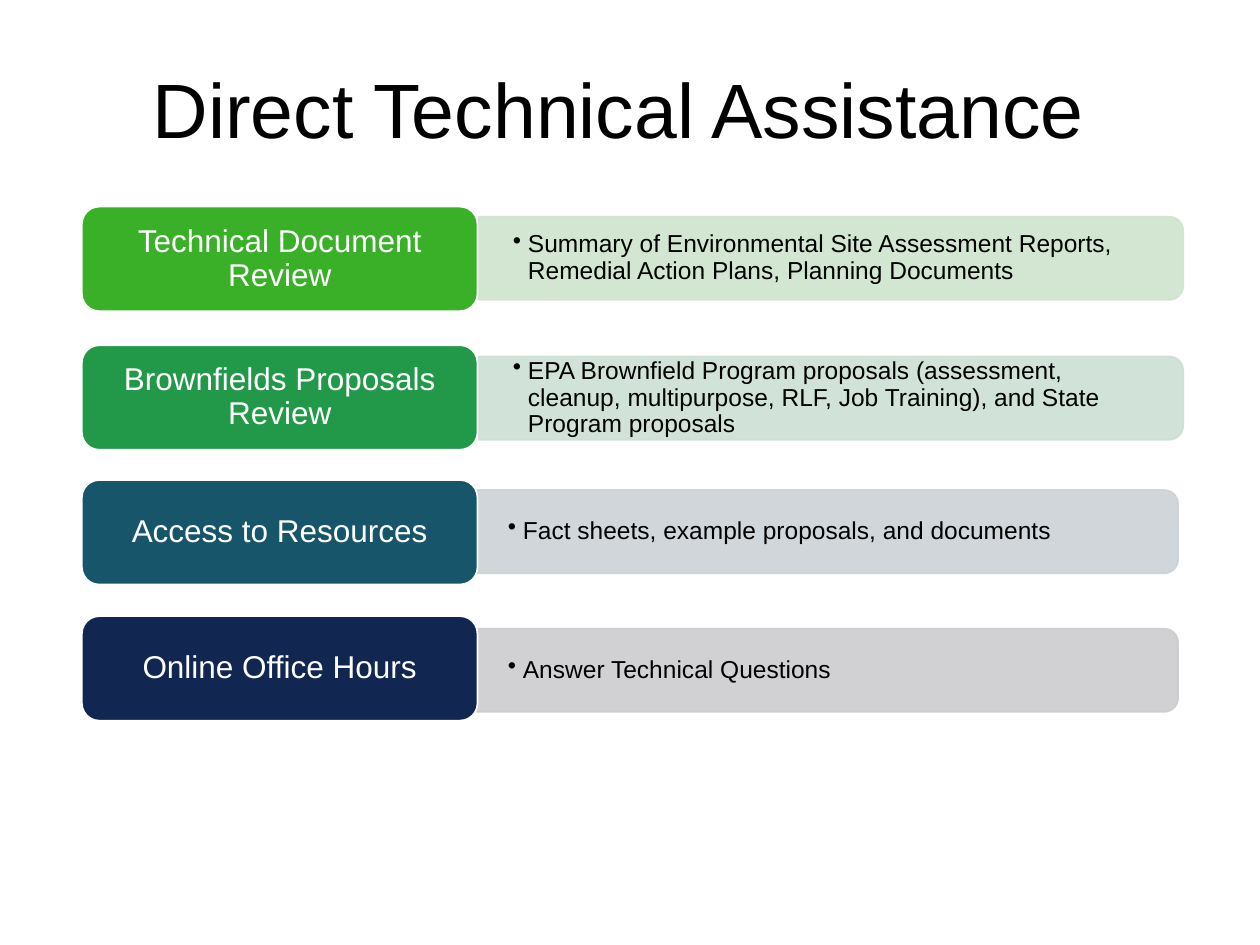
from dataclasses import dataclass
from math import cos, pi, sin

from lxml import etree
from pptx import Presentation
from pptx.dml.color import RGBColor
from pptx.enum.shapes import MSO_SHAPE as Shape
from pptx.enum.text import MSO_ANCHOR as Anchor, PP_ALIGN as Align
from pptx.oxml.ns import qn
from pptx.util import Inches, Pt


@dataclass(frozen=True)
class Theme:
    """Colours, font and type sizes."""
    font: str = "Arial"
    dark: str = "000000"
    light: str = "FFFFFF"
    title: int = 44
    label: int = 18
    detail: int = 14
    panel_alpha: int = 90000


THEME = Theme()
LABEL_X, LABEL_W, LABEL_H = 0.65, 3.14, 0.83
PANEL_W, PANEL_H, PANEL_RADIUS = 5.59, 0.66, 0.11
ROWS = [
    ("Technical Document Review", "3AB028", 1.64,
     "Summary of Environmental Site Assessment Reports, Remedial Action Plans, "
     "Planning Documents", "CEE4CD", 3.8, 1.72),
    ("Brownfields Proposals Review", "229949", 2.74,
     "EPA Brownfield Program proposals (assessment, cleanup, multipurpose, RLF, "
     "Job Training), and State Program proposals", "CCDFD4", 3.8, 2.83),
    ("Access to Resources", "17566A", 3.81,
     "Fact sheets, example proposals, and documents", "CCD2D6", 3.76, 3.89),
    ("Online Office Hours", "122652", 4.89,
     "Answer Technical Questions", "CCCDD0", 3.76, 4.99),
]


def set_all(obj, values):
    """Set each attribute of obj from a dict."""
    for name, value in values.items():
        setattr(obj, name, value)


def write(sp, text, size, color, align, anchor, margins):
    """Fill a shape with one formatted paragraph and return it."""
    tf = sp.text_frame
    sides = ("margin_left", "margin_top", "margin_right", "margin_bottom")
    set_all(tf, {"word_wrap": True, "vertical_anchor": anchor,
                 **{side: Inches(m) for side, m in zip(sides, margins)}})
    p = tf.paragraphs[0]
    set_all(p, {"alignment": align, "line_spacing": 0.9})
    r = p.add_run()
    r.text = text
    set_all(r.font, {"name": THEME.font, "size": Pt(size)})
    r.font.color.rgb = RGBColor.from_string(color)
    return p


def paint(sp, fill, line):
    """Give a shape a solid fill and a one-point line, without shadow."""
    sp.shadow.inherit = False
    sp.fill.solid()
    sp.fill.fore_color.rgb = RGBColor.from_string(fill)
    sp.line.color.rgb = RGBColor.from_string(line)
    sp.line.width = Pt(1)


def add_title(s, text, x, y, w, h):
    """Place the slide title in its box."""
    sp = s.shapes.title
    set_all(sp, dict(zip(("left", "top", "width", "height"), map(Inches, (x, y, w, h)))))
    write(sp, text, THEME.title, THEME.dark, Align.CENTER, Anchor.TOP,
          (0.1, 0.1, 0.1, 0.05))


def add_panel(s, text, fill, x, y, w, h):
    """Draw a detail panel with rounded right corners and a bulleted text."""
    rad, steps = PANEL_RADIUS, 8
    points = [(x, y)]
    for cy, start in ((y + rad, -pi / 2), (y + h - rad, 0)):
        for i in range(steps + 1):
            a = start + i * pi / 2 / steps
            points.append((x + w - rad + rad * cos(a), cy + rad * sin(a)))
    points.append((x, y + h))
    emu = [(Inches(px), Inches(py)) for px, py in points]
    builder = s.shapes.build_freeform(*emu[0])
    builder.add_line_segments(emu[1:], close=True)
    sp = builder.convert_to_shape()
    paint(sp, fill, fill)
    for color in sp._element.spPr.iter(qn("a:srgbClr")):
        etree.SubElement(color, qn("a:alpha"), val=str(THEME.panel_alpha))
    p = write(sp, text, THEME.detail, THEME.dark, Align.LEFT, Anchor.MIDDLE,
              (0.27, 0.17, 0.3, 0.17))
    pPr = p._p.get_or_add_pPr()
    pPr.set("marL", str(Inches(0.12)))
    pPr.set("indent", str(Inches(-0.12)))
    etree.SubElement(pPr, qn("a:buChar"), char="•")


def add_label(s, text, fill, x, y, w, h):
    """Draw the rounded label at the head of a row."""
    sp = s.shapes.add_shape(Shape.ROUNDED_RECTANGLE, *map(Inches, (x, y, w, h)))
    paint(sp, fill, THEME.light)
    write(sp, text, THEME.label, THEME.light, Align.CENTER, Anchor.MIDDLE,
          (0.08, 0.04, 0.08, 0.04))


def main():
    """Build and save the slide."""
    prs = Presentation()
    set_all(prs, {"slide_width": Inches(10), "slide_height": Inches(7.5)})
    s = prs.slides.add_slide(prs.slide_layouts[5])
    add_title(s, "Direct Technical Assistance", 0.6, 0.47, 8.62, 1.09)
    for label, color, label_y, detail, tint, panel_x, panel_y in ROWS:
        add_panel(s, detail, tint, panel_x, panel_y, PANEL_W, PANEL_H)
        add_label(s, label, color, LABEL_X, label_y, LABEL_W, LABEL_H)
    prs.save("out.pptx")


if __name__ == "__main__":
    main()
